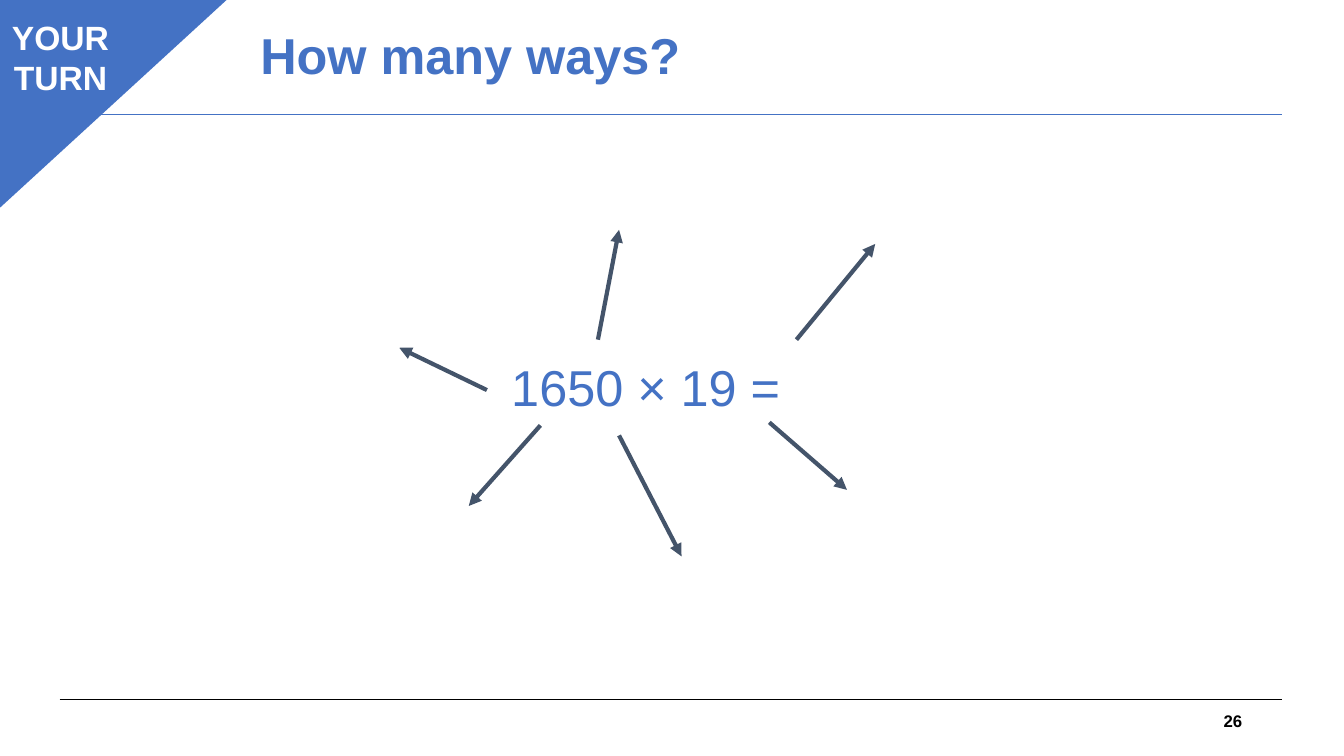
from dataclasses import dataclass

from lxml.etree import SubElement
from pptx import Presentation
from pptx.dml.color import RGBColor
from pptx.enum.shapes import MSO_CONNECTOR, MSO_SHAPE
from pptx.enum.text import MSO_ANCHOR, PP_ALIGN
from pptx.oxml.ns import qn
from pptx.util import Inches, Pt

WIDTH, HEIGHT = Inches(13.33), Inches(7.5)
COLORS = {"blue": "4472C4", "slate": "44546A", "black": "000000", "white": "FFFFFF"}


@dataclass(frozen=True)
class Box:
    left: float
    top: float
    width: float
    height: float


@dataclass(frozen=True)
class Label:
    text: str
    box: Box
    size: int
    color: str
    bold: bool = True
    fill: bool = False
    wrap: bool = True
    align: PP_ALIGN = PP_ALIGN.CENTER
    anchor: MSO_ANCHOR = MSO_ANCHOR.MIDDLE
    pitch: float = 1.0


@dataclass(frozen=True)
class Line:
    start: tuple[float, float]
    end: tuple[float, float]
    color: str = "slate"
    weight: float = 3
    arrow: bool = True


def across(share: float) -> int:
    return round(WIDTH * share / 100)


def down(share: float) -> int:
    return round(HEIGHT * share / 100)


def place(box: Box) -> tuple[int, int, int, int]:
    return across(box.left), down(box.top), across(box.width), down(box.height)


def tint(name: str) -> RGBColor:
    return RGBColor.from_string(COLORS[name])


def apply(target: object, values: dict[str, object]) -> None:
    for name, value in values.items():
        setattr(target, name, value)


def draw_line(slide, line: Line) -> None:
    link = slide.shapes.add_connector(
        MSO_CONNECTOR.STRAIGHT,
        across(line.start[0]), down(line.start[1]),
        across(line.end[0]), down(line.end[1]),
    )
    link.line.color.rgb = tint(line.color)
    link.line.width = Pt(line.weight)
    if line.arrow:
        SubElement(link.line._get_or_add_ln(), qn("a:tailEnd"), type="triangle")
    SubElement(link._element.spPr, qn("a:effectLst"))


def draw_label(slide, label: Label) -> None:
    shape = slide.shapes.add_textbox(*place(label.box))
    if label.fill:
        shape.fill.solid()
        shape.fill.fore_color.rgb = tint("white")
    frame = shape.text_frame
    frame.text = label.text
    apply(frame, {"word_wrap": label.wrap, "vertical_anchor": label.anchor})
    for para in frame.paragraphs:
        apply(para, {"alignment": label.align, "line_spacing": label.pitch})
        font = para.runs[0].font
        apply(font, {"name": "Arial", "size": Pt(label.size), "bold": label.bold})
        font.color.rgb = tint(label.color)


def draw_corner(slide, box: Box) -> None:
    shape = slide.shapes.add_shape(MSO_SHAPE.ISOSCELES_TRIANGLE, *place(box))
    shape.adjustments[0] = 0
    shape._element.spPr.xfrm.set("flipV", "1")
    shape.shadow.inherit = False
    shape.fill.solid()
    shape.fill.fore_color.rgb = tint("blue")
    shape.line.color.rgb = tint("blue")
    shape.line.width = Pt(1)


RULES = [
    Line((4.43, row), (95.42, row), color, 0.75, False)
    for row, color in ((92.53, "black"), (15.2, "blue"))
]
PANELS = [
    Label("1650 × 19 =", Box(13.05, 45.6, 70, 12.13), 36, "blue",
          bold=False, fill=True, pitch=0.9),
    Label("26", Box(70.67, 92.67, 22.5, 5.33), 12, "black", align=PP_ALIGN.RIGHT),
    Label("How many ways?", Box(0, 1.6, 70, 12.13), 36, "blue", fill=True, pitch=0.9),
]
CORNER = Box(-0.23, -0.27, 17.18, 28)
BADGE = Label("YOUR\nTURN", Box(0.08, 1.6, 8.85, 12.13), 24, "white",
              wrap=False, anchor=MSO_ANCHOR.TOP)
ARROWS = [
    Line((59.26, 44.93), (65.12, 32.27)),
    Line((36.23, 51.6), (29.71, 46)),
    Line((46.06, 57.6), (50.71, 73.6)),
    Line((40.21, 56.27), (34.88, 66.93)),
    Line((44.49, 44.93), (46.06, 30.4)),
    Line((57.24, 55.87), (63.02, 64.8)),
]


def main() -> None:
    deck = Presentation()
    apply(deck, {"slide_width": WIDTH, "slide_height": HEIGHT})
    slide = deck.slides.add_slide(deck.slide_layouts[6])
    for rule in RULES:
        draw_line(slide, rule)
    for panel in PANELS:
        draw_label(slide, panel)
    draw_corner(slide, CORNER)
    draw_label(slide, BADGE)
    for arrow in ARROWS:
        draw_line(slide, arrow)
    deck.save("out.pptx")


if __name__ == "__main__":
    main()
